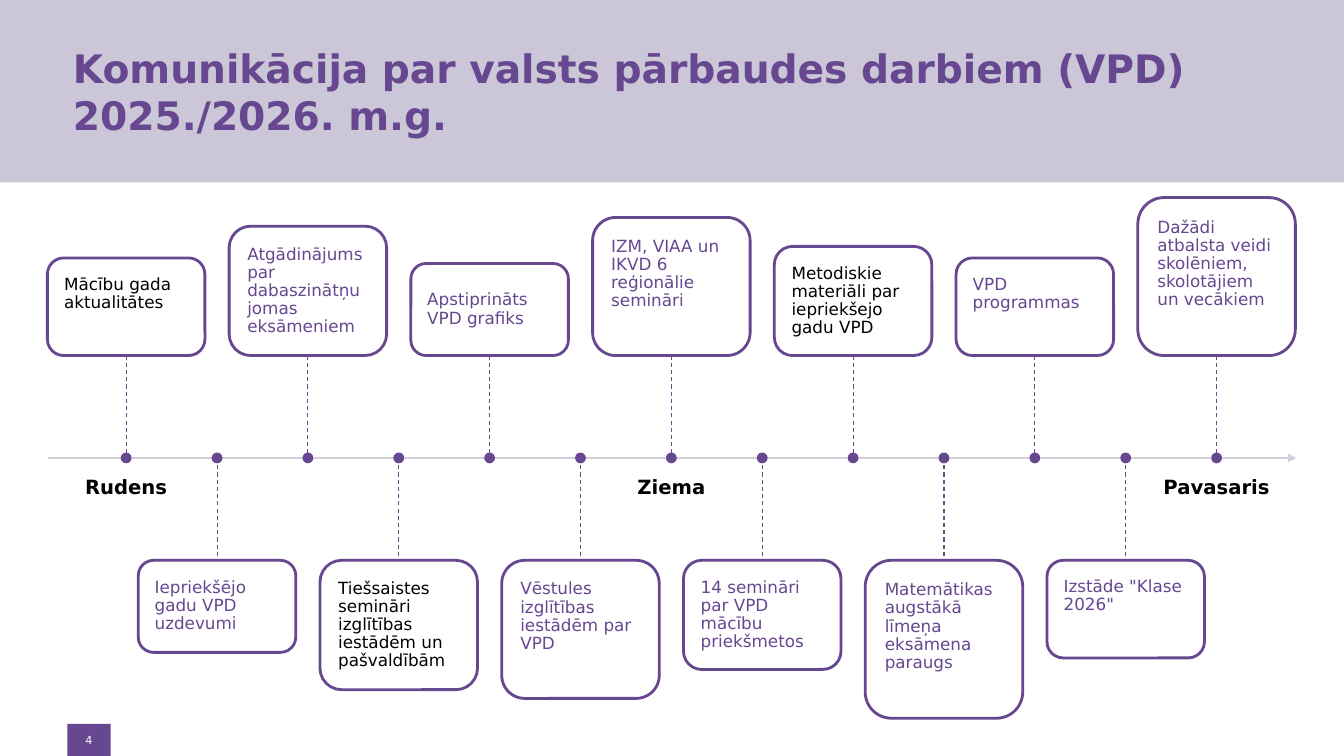
from lxml import etree
from pptx import Presentation
from pptx.dml.color import RGBColor
from pptx.enum import dml, shapes, text
from pptx.oxml import ns
from pptx.util import Cm, Pt

FONT = "DejaVu Sans"
PURPLE = RGBColor(0x66, 0x47, 0x90)
LAVENDER = RGBColor(0xCB, 0xC7, 0xD8)
AXIS_GREY = RGBColor(0xD3, 0xCF, 0xDB)
BLACK = RGBColor(0, 0, 0)
WHITE = RGBColor(0xFF, 0xFF, 0xFF)

TITLE = "Komunikācija par valsts pārbaudes darbiem (VPD) 2025./2026. m.g."
SEASONS = {0: "Rudens", 6: "Ziema", 12: "Pavasaris"}
RAISED = Cm(0.64)
EVENTS = [
    ("Mācību gada aktualitātes", 2.46, BLACK, RAISED),
    ("Iepriekšējo gadu VPD uzdevumi", 2.32, PURPLE, 0),
    ("Atgādinājums par dabaszinātņu jomas eksāmeniem", 3.26, PURPLE, 0),
    ("Tiešsaistes semināri izglītības iestādēm un pašvaldībām", 3.26, BLACK, 0),
    ("Apstiprināts VPD grafiks", 2.32, PURPLE, 0),
    ("Vēstules izglītības iestādēm par VPD", 3.48, PURPLE, RAISED),
    ("IZM, VIAA un IKVD 6 reģionālie semināri", 3.48, PURPLE, RAISED),
    ("14 semināri par VPD mācību priekšmetos", 2.75, PURPLE, 0),
    ("Metodiskie materiāli par iepriekšejo gadu VPD", 2.75, BLACK, 0),
    ("Matemātikas augstākā līmeņa eksāmena paraugs", 3.98, PURPLE, RAISED),
    ("VPD programmas", 2.46, PURPLE, RAISED),
    ('Izstāde "Klase 2026"', 2.46, PURPLE, RAISED),
    ("Dažādi atbalsta veidi skolēniem, skolotājiem un vecākiem", 3.98, PURPLE, RAISED),
]


def add_box(slide, kind, left, top, width, height, fill, line=None):
    """Add a flat preset shape, outlined at 2 pt when a line colour is given."""
    shape = slide.shapes.add_shape(kind, left, top, width, height)
    shape.shadow.inherit = False
    shape.fill.solid()
    shape.fill.fore_color.rgb = fill
    if line is None:
        shape.line.fill.background()
    else:
        shape.line.color.rgb = line
        shape.line.width = Pt(2)
    return shape


def write(shape, words, size, color, margins, bold=False,
          align=text.PP_ALIGN.LEFT, anchor=text.MSO_ANCHOR.MIDDLE, spacing=None):
    """Put one formatted paragraph into a shape; margins run left, top, right, bottom."""
    frame = shape.text_frame
    frame.word_wrap = True
    frame.vertical_anchor = anchor
    frame.margin_left, frame.margin_top, frame.margin_right, frame.margin_bottom = margins
    frame.text = words
    paragraph = frame.paragraphs[0]
    paragraph.alignment = align
    paragraph.line_spacing = spacing
    font = paragraph.runs[0].font
    font.name, font.size, font.bold = FONT, Pt(size), bold
    font.color.rgb = color


def add_line(slide, start, end, color, width):
    """Add a straight connector without a shadow between two points."""
    line = slide.shapes.add_connector(shapes.MSO_CONNECTOR.STRAIGHT, *start, *end)
    line.line.color.rgb = color
    line.line.width = Pt(width)
    etree.SubElement(line._element.spPr, ns.qn("a:effectLst"))
    return line


def add_header(slide, left, top, width, height):
    """Draw the title band with its heading."""
    add_box(slide, shapes.MSO_SHAPE.RECTANGLE, left, top, width, height, LAVENDER)
    heading = slide.shapes.add_textbox(left + Cm(1.84), top + Cm(0.71), width - Cm(2.4), Cm(3.18))
    write(heading, TITLE, 28, PURPLE, (0, Cm(0.13), Cm(0.25), Cm(0.13)), bold=True)


def add_page_number(slide, left, top, width, height):
    """Draw the page number tab."""
    tab = add_box(slide, shapes.MSO_SHAPE.RECTANGLE, left, top, width, height, PURPLE)
    write(tab, "4", 8, WHITE, [Cm(0.1)] * 4, align=text.PP_ALIGN.CENTER)


def add_event(slide, center, axis, above, event):
    """Draw one event: its card, dashed stem and marker on the axis."""
    words, height, color, raised = event
    reach, width, dot, inset = Cm(2.58), Cm(3.97), Cm(0.2), Cm(0.3)
    edge = axis - reach if above else axis + reach
    top = edge - Cm(height) if above else edge
    card = add_box(slide, shapes.MSO_SHAPE.ROUNDED_RECTANGLE, center - width // 2, top,
                   width, Cm(height), WHITE, PURPLE)
    write(card, words, 12, color, (inset, inset, inset, inset + raised), spacing=0.9)
    stem = add_line(slide, (center, min(edge, axis)), (center, max(edge, axis)), PURPLE, 0.75)
    stem.line.dash_style = dml.MSO_LINE.DASH
    add_box(slide, shapes.MSO_SHAPE.OVAL, center - dot // 2, axis - dot // 2, dot, dot, PURPLE, PURPLE)


def add_timeline(slide, left, top, width, height):
    """Draw the axis, the season labels and the events alternating above and below."""
    axis = top + height // 2
    arrow = add_line(slide, (left, axis), (left + width, axis), AXIS_GREY, 2)
    etree.SubElement(arrow.line._get_or_add_ln(), ns.qn("a:tailEnd"), type="triangle")
    label_width = Cm(3.48)
    for index, event in enumerate(EVENTS):
        center = left + Cm(1.98) + index * Cm(2.29)
        add_event(slide, center, axis, index % 2 == 0, event)
        if index in SEASONS:
            label = slide.shapes.add_textbox(center - label_width // 2, axis + Cm(0.5), label_width, Cm(1.52))
            write(label, SEASONS[index], 14, BLACK, [0] * 4, bold=True, spacing=0.9,
                  align=text.PP_ALIGN.CENTER, anchor=text.MSO_ANCHOR.TOP)


def main():
    """Build and save the slide."""
    presentation = Presentation()
    presentation.slide_width, presentation.slide_height = Cm(33.87), Cm(19.05)
    slide = presentation.slides.add_slide(presentation.slide_layouts[6])
    add_header(slide, 0, 0, presentation.slide_width, Cm(4.6))
    add_page_number(slide, Cm(1.7), Cm(18.24), Cm(1.09), Cm(0.81))
    add_timeline(slide, Cm(1.2), Cm(4.98), Cm(31.47), Cm(13.12))
    presentation.save("out.pptx")


if __name__ == "__main__":
    main()
